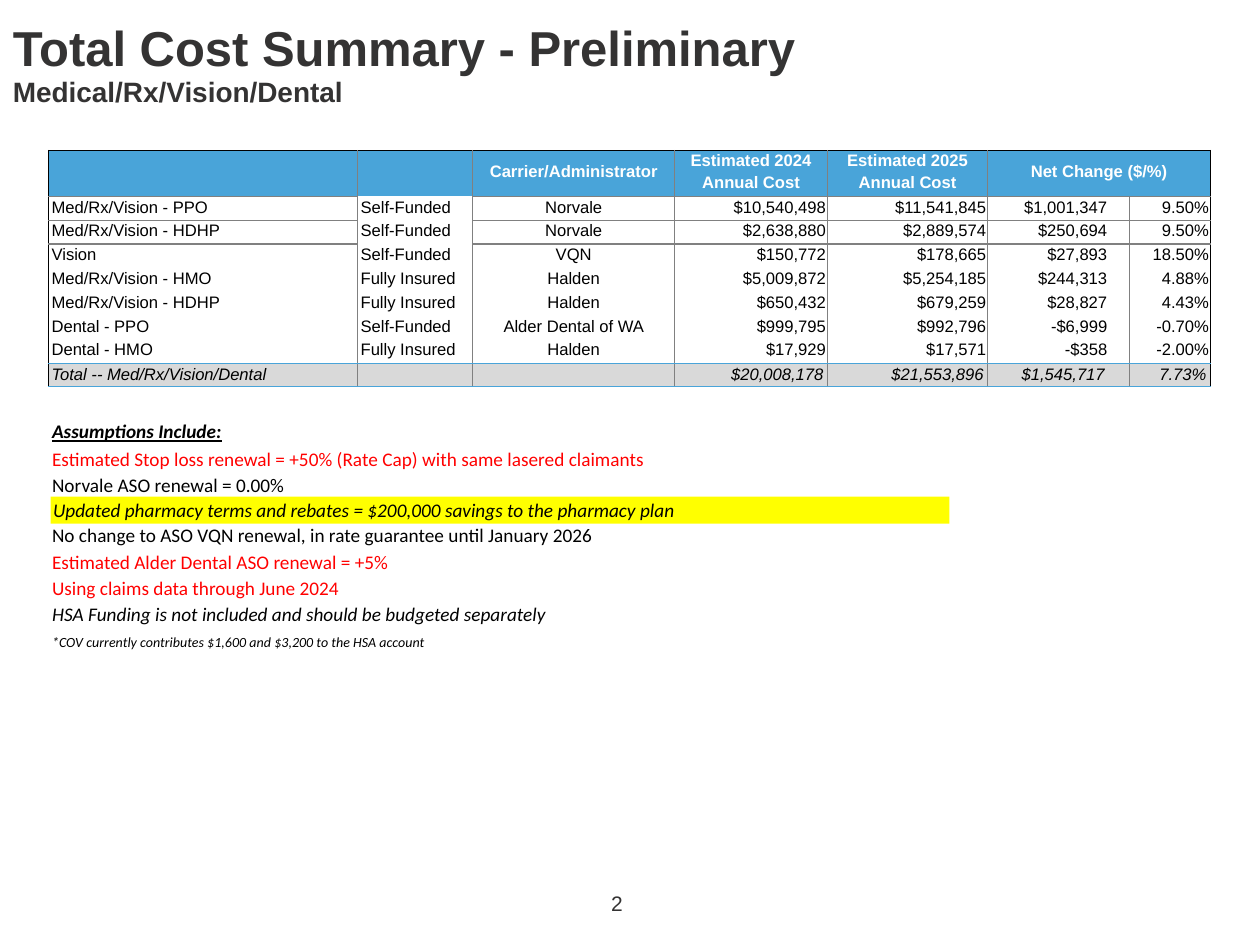
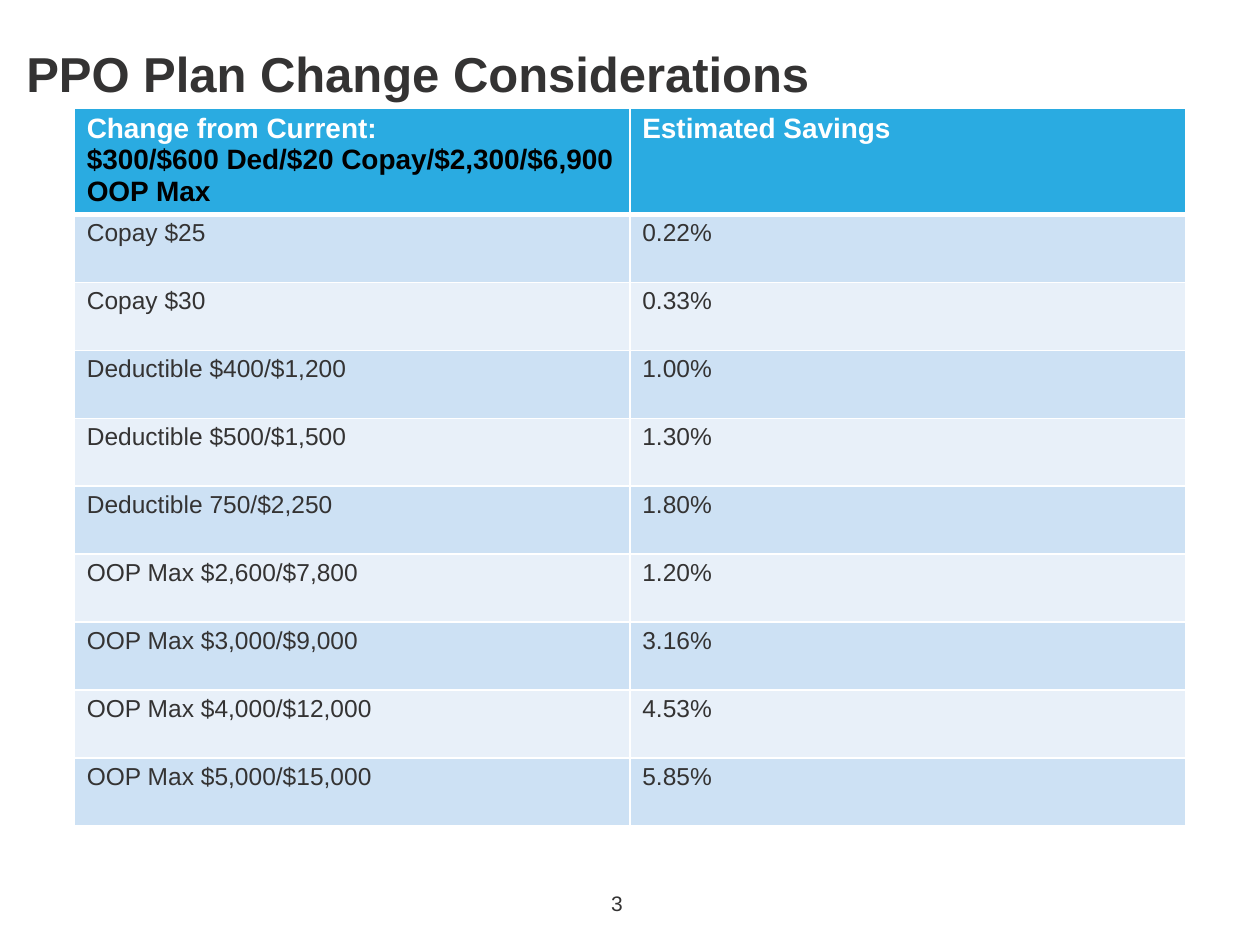
from lxml.etree import SubElement
from pptx import Presentation
from pptx.dml.color import RGBColor
from pptx.enum.shapes import MSO_SHAPE as Shape
from pptx.enum.text import MSO_ANCHOR as Anchor, MSO_AUTO_SIZE as Fit, PP_ALIGN as Align
from pptx.oxml.ns import qn
from pptx.util import Cm, Pt

INK, BLACK, WHITE, RED = "343333", "000000", "FFFFFF", "FF0000"
GREY, BLUE, SILVER, YELLOW = "808080", "49A4D9", "D9D9D9", "FFFF00"
SKY, PALE, MIST = "2AABE1", "CDE1F4", "E8F0F9"
PLAIN_GRID = "{2D5ABB26-0587-4C30-8999-92F81FD0307C}"

COSTS = [
    ("", "", "Carrier/Administrator", "Estimated 2024\nAnnual Cost",
     "Estimated 2025\nAnnual Cost", "Net Change ($/%)", ""),
    ("Med/Rx/Vision - PPO", "Self-Funded", "Norvale", "$10,540,498", "$11,541,845", "$1,001,347", "9.50%"),
    ("Med/Rx/Vision - HDHP", "Self-Funded", "Norvale", "$2,638,880", "$2,889,574", "$250,694", "9.50%"),
    ("Vision", "Self-Funded", "VQN", "$150,772", "$178,665", "$27,893", "18.50%"),
    ("Med/Rx/Vision - HMO", "Fully Insured", "Halden", "$5,009,872", "$5,254,185", "$244,313", "4.88%"),
    ("Med/Rx/Vision - HDHP", "Fully Insured", "Halden", "$650,432", "$679,259", "$28,827", "4.43%"),
    ("Dental - PPO", "Self-Funded", "Alder Dental of WA", "$999,795", "$992,796", "-$6,999", "-0.70%"),
    ("Dental - HMO", "Fully Insured", "Halden", "$17,929", "$17,571", "-$358", "-2.00%"),
    ("Total -- Med/Rx/Vision/Dental", "", "", "$20,008,178", "$21,553,896", "$1,545,717", "7.73%"),
]
SAVINGS = [
    ("Copay $25", "0.22%"),
    ("Copay $30", "0.33%"),
    ("Deductible $400/$1,200", "1.00%"),
    ("Deductible $500/$1,500", "1.30%"),
    ("Deductible 750/$2,250", "1.80%"),
    ("OOP Max $2,600/$7,800", "1.20%"),
    ("OOP Max $3,000/$9,000", "3.16%"),
    ("OOP Max $4,000/$12,000", "4.53%"),
    ("OOP Max $5,000/$15,000", "5.85%"),
]


def rgb(code):
    """Turn a hex string into a colour."""
    return RGBColor.from_string(code)


def pad(frame, left=0, top=0, right=0):
    """Set the insets of a text frame or a cell, in cm."""
    frame.margin_left, frame.margin_top = Cm(left), Cm(top)
    frame.margin_right, frame.margin_bottom = Cm(right), 0


def style(para, size, color, name="Arial", bold=False, italic=False,
          under=False, align=Align.LEFT, line=None, before=0):
    """Format one paragraph."""
    para.alignment = align
    para.space_before = Pt(before)
    if line:
        para.line_spacing = line
    font = para.font
    font.size, font.name, font.color.rgb = Pt(size), name, rgb(color)
    font.bold, font.italic, font.underline = bold, italic, under
    if not para.text:
        para._p.get_or_add_endParaRPr().set("sz", str(int(size * 100)))


def write(frame, lines):
    """Fill a frame with (text, format) pairs, one paragraph each."""
    for i, (text, look) in enumerate(lines):
        para = frame.add_paragraph() if i else frame.paragraphs[0]
        para.text = text
        style(para, **look)


def label(slide, box, lines, left=0, top=0):
    """Add a text box at a box given in cm."""
    frame = slide.shapes.add_textbox(*map(Cm, box)).text_frame
    frame.word_wrap = True
    pad(frame, left, top)
    write(frame, lines)


def edge(cell, width, **sides):
    """Draw the named sides (L, R, T, B) of a cell in the given colours."""
    props = cell._tc.get_or_add_tcPr()
    for side in "LRTB":
        if sides.get(side):
            line = SubElement(props, qn("a:ln" + side), w=str(Pt(width)))
            fill = SubElement(line, qn("a:solidFill"))
            SubElement(fill, qn("a:srgbClr"), val=sides[side])


def paint(cell, color):
    """Fill a cell, or leave it clear."""
    if color:
        cell.fill.solid()
        cell.fill.fore_color.rgb = rgb(color)
    else:
        cell.fill.background()


def grid(slide, left, top, cols, rows):
    """Add an unstyled table with the given column and row sizes in cm."""
    box = (left, top, sum(cols), sum(rows))
    table = slide.shapes.add_table(len(rows), len(cols), *map(Cm, box)).table
    table._tbl.tblPr.find(qn("a:tableStyleId")).text = PLAIN_GRID
    for col, width in zip(table.columns, cols):
        col.width = Cm(width)
    for row, height in zip(table.rows, rows):
        row.height = Cm(height)
    return table


def page(deck, number, lines, left, top):
    """Add a slide with its title and page number."""
    slide = deck.slides.add_slide(deck.slide_layouts[5])
    title = slide.shapes.title
    title.left, title.top, title.width, title.height = map(Cm, (0.23, 0.3, 16.13, 1.88))
    frame = title.text_frame
    frame.auto_size, frame.word_wrap = Fit.NONE, True
    frame.vertical_anchor = Anchor.TOP
    pad(frame, left, top)
    write(frame, lines)
    label(slide, (12.22, 17.96, 0.48, 0.53),
          [(str(number), dict(size=12, color=INK, line=Pt(14.2)))], left=0.1)
    return slide


def costs(slide, left, top):
    """Place the table of yearly costs."""
    cols = [6.23, 2.32, 4.07, 3.08, 3.23, 2.86, 1.63]
    last = len(COSTS) - 1
    table = grid(slide, left, top, cols, [0.93] + [0.48] * last)
    table.cell(0, 5).merge(table.cell(0, 6))
    rules = [BLACK, GREY, GREY] + [None] * 5 + [BLUE, BLUE]
    sides = [BLACK] + [GREY] * 6 + [BLACK]
    aligns = [Align.LEFT] * 2 + [Align.CENTER] + [Align.RIGHT] * 4
    for r, row in enumerate(COSTS):
        head, total = r == 0, r == last
        for c, text in enumerate(row):
            cell = table.cell(r, c)
            above, below = [None if c == 1 and line == GREY else line
                            for line in rules[r:r + 2]]
            right = BLACK if cell.is_merge_origin else sides[c + 1]
            edge(cell, 0.75, L=sides[c], R=right, T=above, B=below)
            paint(cell, BLUE if head else SILVER if total else None)
            look = dict(size=9.5, color=WHITE if head else BLACK, bold=head,
                        italic=total, align=Align.CENTER if head else aligns[c])
            parts = text.split("\n")
            write(cell.text_frame, [(part, dict(look, before=1.6 * i))
                                    for i, part in enumerate(parts)])
            if head:
                pad(cell, top=0.03 if len(parts) > 1 else 0.24)
            else:
                inset = 0.45 if c == 5 else 0.03
                pad(cell, 0 if c == 2 else 0.06, 0.05 if total else 0.03,
                    0 if c == 2 else inset + 0.05 * total)


def notes(slide, left, top):
    """Place the list of assumptions with its marked line."""
    base = dict(size=11, color=BLACK, name="Calibri")
    alert = dict(base, color=RED)
    slant = dict(base, italic=True)
    label(slide, (left, top, 14, 1.65), [
        ("Assumptions Include:", dict(slant, bold=True, under=True)),
        ("Estimated Stop loss renewal = +50% (Rate Cap) with same lasered claimants",
         dict(alert, line=Pt(15), before=0.8)),
        ("Norvale ASO renewal = 0.00%", dict(base, line=Pt(15))),
    ], left=0.03, top=0.1)
    band = slide.shapes.add_shape(Shape.RECTANGLE, Cm(left), Cm(top + 1.65), Cm(18.12), Cm(0.55))
    band.shadow.inherit = False
    band.fill.solid()
    band.fill.fore_color.rgb = rgb(YELLOW)
    band.line.fill.background()
    frame = band.text_frame
    frame.vertical_anchor = Anchor.TOP
    pad(frame, 0.05, 0.03)
    write(frame, [("Updated pharmacy terms and rebates = $200,000 savings to the pharmacy plan", slant)])
    label(slide, (left, top + 2.1, 14, 2.7), [
        ("No change to ASO VQN renewal, in rate guarantee until January 2026", dict(base, line=1.14)),
        ("Estimated Alder Dental ASO renewal = +5%", dict(alert, line=1.14)),
        ("Using claims data through June 2024", dict(alert, before=1.8)),
        ("HSA Funding is not included and should be budgeted separately", dict(slant, before=1.8)),
        ("*COV currently contributes $1,600 and $3,200 to the HSA account",
         dict(slant, size=8, before=4.8)),
    ], left=0.03, top=0.03)


def savings(slide, left, top):
    """Place the table of plan changes and their savings."""
    table = grid(slide, left, top, [11.2, 11.2], [2.11] + [1.37] * len(SAVINGS))
    bold = dict(size=16, color=WHITE, bold=True)
    heads = [
        [("Change from Current:", bold),
         ("$300/$600 Ded/$20 Copay/$2,300/$6,900 OOP Max", dict(bold, color=BLACK))],
        [("Estimated Savings", bold)],
    ]
    body = [[[(text, dict(size=14, color=INK))] for text in row] for row in SAVINGS]
    for r, row in enumerate([heads] + body):
        for c, lines in enumerate(row):
            cell = table.cell(r, c)
            edge(cell, 1, L=WHITE, R=WHITE)
            edge(cell, 3 if r == 1 else 1, T=WHITE)
            edge(cell, 3 if r == 0 else 1, B=WHITE)
            paint(cell, SKY if r == 0 else PALE if r % 2 else MIST)
            pad(cell, 0.25, 0.1)
            write(cell.text_frame, lines)


def main():
    """Build both slides."""
    deck = Presentation()
    deck.slide_width, deck.slide_height = Cm(25.4), Cm(19.05)
    head = dict(size=28, color=INK, bold=True)
    first = page(deck, 2, [
        ("Total Cost Summary - Preliminary", dict(head, line=Pt(32.8))),
        ("Medical/Rx/Vision/Dental", dict(head, size=16, line=Pt(18.4))),
    ], 0.03, 0.08)
    costs(first, 0.98, 3.03)
    notes(first, 1.02, 8.36)
    second = page(deck, 3, [("PPO Plan Change Considerations", head)], 0.3, 0.58)
    savings(second, 1.5, 2.19)
    deck.save("out.pptx")


if __name__ == "__main__":
    main()
